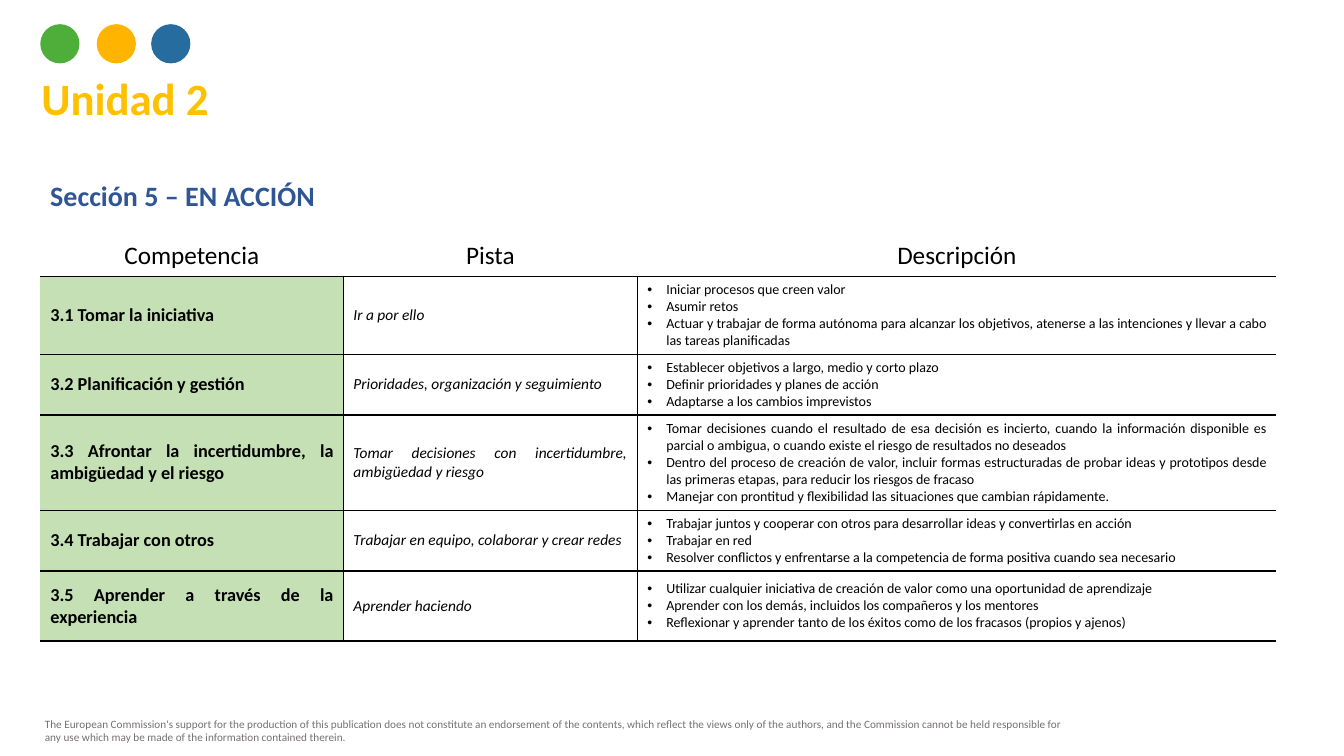
import pptx
import pptx.dml.color
import pptx.enum.shapes
import pptx.enum.text
import pptx.oxml
import pptx.oxml.ns
import pptx.util

Pt = pptx.util.Pt
RGBColor = pptx.dml.color.RGBColor
Align = pptx.enum.text.PP_ALIGN
Anchor = pptx.enum.text.MSO_ANCHOR

BLACK = RGBColor(0x00, 0x00, 0x00)
GOLD = RGBColor(0xFF, 0xC0, 0x00)
NAVY = RGBColor(0x2F, 0x55, 0x97)
GREY = RGBColor(0x76, 0x71, 0x71)
PALE_GREEN = RGBColor(0xC5, 0xE0, 0xB4)
DOT_GREEN = RGBColor(0x4E, 0xAE, 0x3A)
DOT_YELLOW = RGBColor(0xFF, 0xB5, 0x00)
DOT_BLUE = RGBColor(0x26, 0x6C, 0x9F)

FORMATS = {
    "unit": {"size": Pt(32), "bold": True},
    "section": {"size": Pt(20), "bold": True},
    "disclaimer": {"size": Pt(8)},
    "heading": {"size": Pt(18)},
    "competence": {"size": Pt(13), "bold": True},
    "hint": {"size": Pt(11), "italic": True},
    "description": {"size": Pt(10)},
}

HEADINGS = ["Competencia", "Pista", "Descripción"]
COMPETENCES = [
    ("3.1 Tomar la iniciativa", "Ir a por ello", [
        "Iniciar procesos que creen valor",
        "Asumir retos",
        "Actuar y trabajar de forma autónoma para alcanzar los objetivos, atenerse a las "
        "intenciones y llevar a cabo las tareas planificadas"]),
    ("3.2 Planificación y gestión", "Prioridades, organización y seguimiento", [
        "Establecer objetivos a largo, medio y corto plazo",
        "Definir prioridades y planes de acción",
        "Adaptarse a los cambios imprevistos"]),
    ("3.3 Afrontar la incertidumbre, la ambigüedad y el riesgo",
     "Tomar decisiones con incertidumbre, ambigüedad y riesgo", [
         "Tomar decisiones cuando el resultado de esa decisión es incierto, cuando la "
         "información disponible es parcial o ambigua, o cuando existe el riesgo de "
         "resultados no deseados",
         "Dentro del proceso de creación de valor, incluir formas estructuradas de probar "
         "ideas y prototipos desde las primeras etapas, para reducir los riesgos de fracaso",
         "Manejar con prontitud y flexibilidad las situaciones que cambian rápidamente."]),
    ("3.4 Trabajar con otros", "Trabajar en equipo, colaborar y crear redes", [
        "Trabajar juntos y cooperar con otros para desarrollar ideas y convertirlas en acción",
        "Trabajar en red",
        "Resolver conflictos y enfrentarse a la competencia de forma positiva cuando sea "
        "necesario"]),
    ("3.5 Aprender a través de la experiencia", "Aprender haciendo", [
        "Utilizar cualquier iniciativa de creación de valor como una oportunidad de aprendizaje",
        "Aprender con los demás, incluidos los compañeros y los mentores",
        "Reflexionar y aprender tanto de los éxitos como de los fracasos (propios y ajenos)"]),
]
COLUMN_WIDTHS = [216.5, 210, 456.5]
ROW_HEIGHTS = [29, 55.5, 43.5, 68, 43.5, 50]
DOTS = [(28.8, DOT_GREEN), (69.1, DOT_YELLOW), (108, DOT_BLUE)]
DISCLAIMER = (
    "The European Commission's support for the production of this publication does not "
    "constitute an endorsement of the contents, which reflect the views only of the authors, "
    "and the Commission cannot be held responsible for any use which may be made of the "
    "information contained therein.")


class UnitSlide:
    def __init__(self, slide, font_name):
        self.slide = slide
        self.font_name = font_name

    def fill_text(self, frame, lines, role, color, align=Align.LEFT, bulleted=False):
        frame.word_wrap = True
        for index, line in enumerate(lines):
            paragraph = frame.paragraphs[0] if index == 0 else frame.add_paragraph()
            paragraph.text = line
            paragraph.alignment = align
            if bulleted:
                properties = paragraph._p.get_or_add_pPr()
                properties.set("marL", str(Pt(13.5)))
                properties.set("indent", str(-Pt(13.5)))
                properties.append(self.element('<a:buFont {} typeface="Arial"/>'))
                properties.append(self.element('<a:buChar {} char="•"/>'))
            for name, value in {"name": self.font_name, **FORMATS[role]}.items():
                setattr(paragraph.font, name, value)
            paragraph.font.color.rgb = color

    def element(self, markup):
        return pptx.oxml.parse_xml(markup.format(pptx.oxml.ns.nsdecls("a")))

    def title(self, words, left, top, width, height):
        heading = self.slide.shapes.title
        place = {"left": left, "top": top, "width": width, "height": height}
        for name, value in place.items():
            setattr(heading, name, Pt(value))
        frame = heading.text_frame
        frame.auto_size = pptx.enum.text.MSO_AUTO_SIZE.NONE
        frame.vertical_anchor = Anchor.TOP
        self.fill_text(frame, [words], "unit", GOLD)
        frame.paragraphs[0].line_spacing = 1.0

    def text(self, words, left, top, width, height, role, color, align=Align.LEFT):
        box = self.slide.shapes.add_textbox(Pt(left), Pt(top), Pt(width), Pt(height))
        self.fill_text(box.text_frame, [words], role, color, align)

    def dots(self, dots, top, size):
        group = self.slide.shapes.add_group_shape()
        for left, color in dots:
            dot = group.shapes.add_shape(
                pptx.enum.shapes.MSO_SHAPE.OVAL, Pt(left), Pt(top), Pt(size), Pt(size))
            dot.shadow.inherit = False
            dot.fill.solid()
            dot.fill.fore_color.rgb = color
            dot.line.fill.background()

    def cell(self, cell, lines, role, edges, align=Align.JUSTIFY, fill=None, bulleted=False):
        cell.vertical_anchor = Anchor.MIDDLE
        for edge in edges:
            cell._tc.get_or_add_tcPr().append(self.element(
                f'<a:ln{edge} {{}} w="{Pt(1)}"><a:solidFill><a:srgbClr val="{BLACK}"/>'
                f'</a:solidFill></a:ln{edge}>'))
        if fill is None:
            cell.fill.background()
        else:
            cell.fill.solid()
            cell.fill.fore_color.rgb = fill
        self.fill_text(cell.text_frame, lines, role, BLACK, align, bulleted)

    def table(self, left, top):
        frame = self.slide.shapes.add_table(
            len(ROW_HEIGHTS), len(COLUMN_WIDTHS), Pt(left), Pt(top),
            Pt(sum(COLUMN_WIDTHS)), Pt(sum(ROW_HEIGHTS)))
        table = frame.table
        style = table._tbl.tblPr.find(pptx.oxml.ns.qn("a:tableStyleId"))
        style.text = "{2D5ABB26-0587-4C30-8999-92F81FD0307C}"
        table.first_row = False
        table.horz_banding = False
        for column, width in zip(table.columns, COLUMN_WIDTHS):
            column.width = Pt(width)
        for row, height in zip(table.rows, ROW_HEIGHTS):
            row.height = Pt(height)
        for column, heading in enumerate(HEADINGS):
            self.cell(table.cell(0, column), [heading], "heading", "B", Align.CENTER)
        for row, (competence, hint, descriptions) in enumerate(COMPETENCES, 1):
            self.cell(table.cell(row, 0), [competence], "competence", "RTB", fill=PALE_GREEN)
            self.cell(table.cell(row, 1), [hint], "hint", "LTB")
            self.cell(table.cell(row, 2), descriptions, "description", "TB", bulleted=True)


def main():
    deck = pptx.Presentation()
    deck.slide_width = Pt(960)
    deck.slide_height = Pt(540)
    unit = UnitSlide(deck.slides.add_slide(deck.slide_layouts[5]), "Calibri")
    unit.text(DISCLAIMER, 25, 508.5, 753, 26.5, "disclaimer", GREY)
    unit.title("Unidad 2", 22.3, 47, 140, 46)
    unit.text("Sección 5 – EN ACCIÓN", 28.8, 124, 883, 31.5, "section", NAVY, Align.JUSTIFY)
    unit.dots(DOTS, 17.3, 28)
    unit.table(28.8, 168.5)
    deck.save("out.pptx")


if __name__ == "__main__":
    main()
